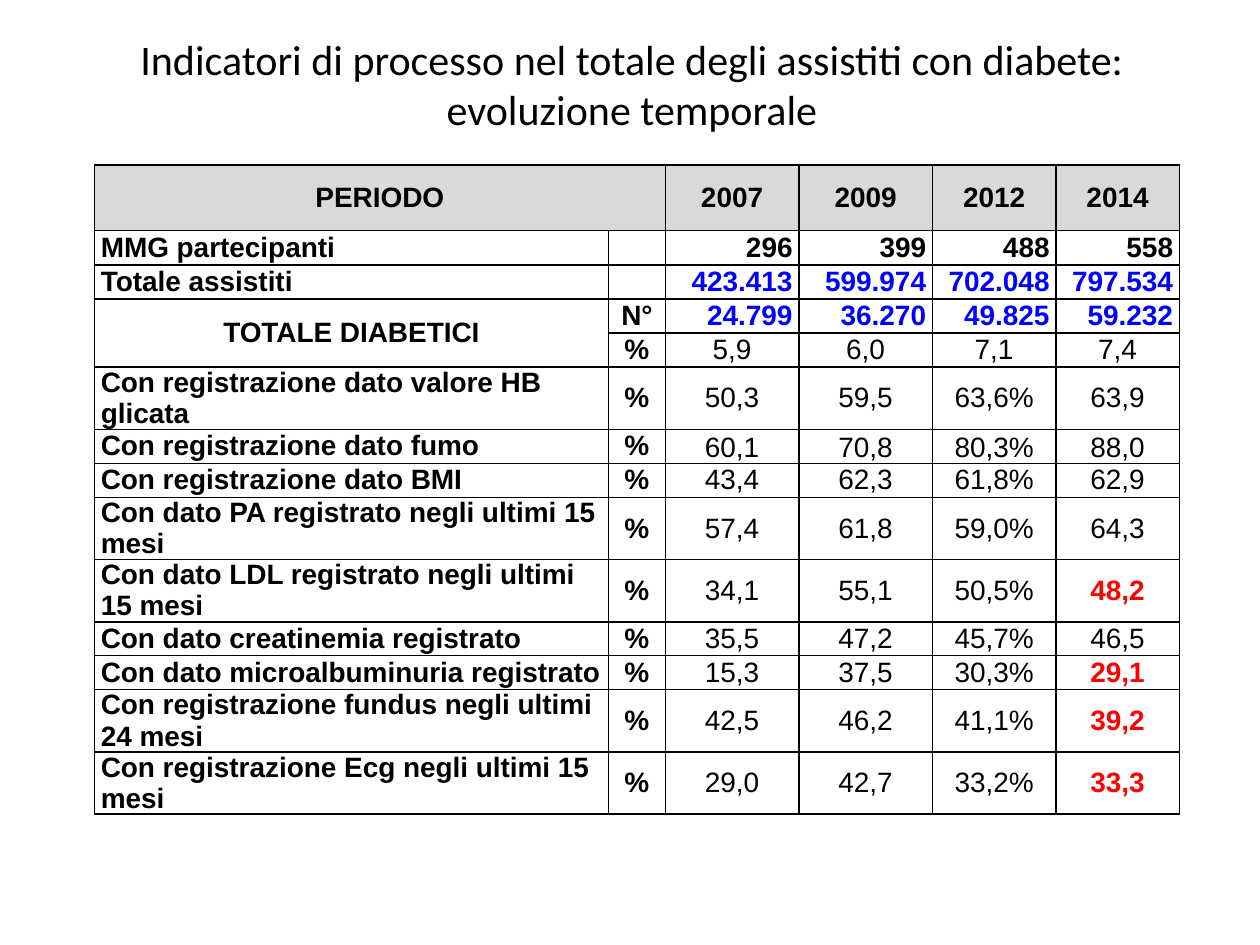
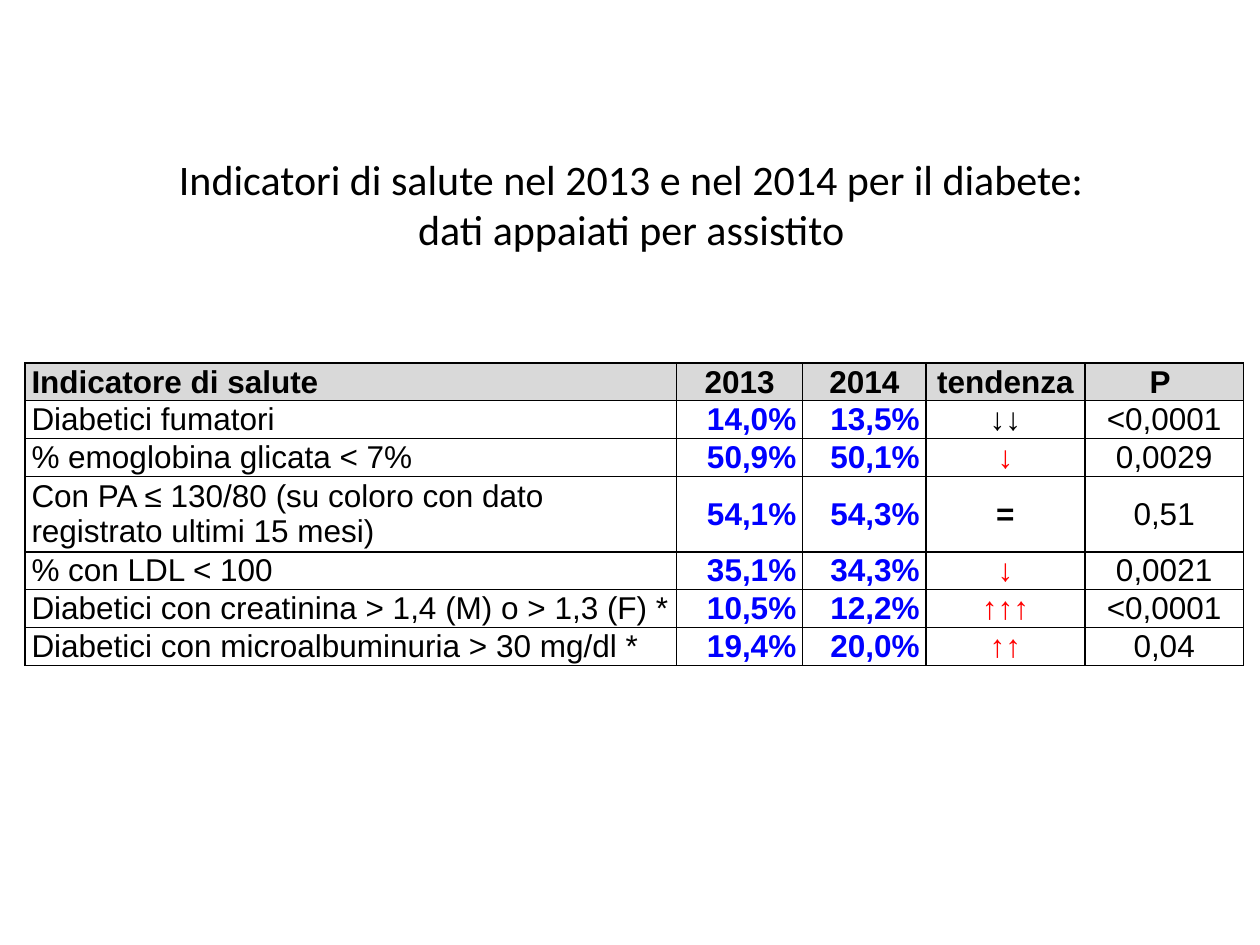
from dataclasses import dataclass, replace

from lxml.etree import SubElement
from pptx import Presentation
from pptx.dml.color import RGBColor
from pptx.enum.text import MSO_ANCHOR as Anchor, MSO_AUTO_SIZE as AutoSize, PP_ALIGN as Align
from pptx.oxml import parse_xml
from pptx.oxml.ns import nsdecls, qn
from pptx.util import Inches, Pt

# Shared look
BLACK, WHITE, GREY, BLUE, RED = "000000", "FFFFFF", "D9D9D9", "0000FF", "FF0000"
TITLE_FONT, TABLE_FONT = "Calibri", "Arial"
TITLE_SIZE = 24


@dataclass(frozen=True)
class Cell:
    text: str
    align: Align = Align.CENTER
    bold: bool = False
    color: str = BLACK
    fill: str = WHITE
    anchor: Anchor = Anchor.MIDDLE


@dataclass(frozen=True)
class Grid:
    left: float
    top: float
    widths: list[float]
    heights: list[float]
    size: int
    rows: list[list[Cell]]


def rgb(color: str) -> RGBColor:
    return RGBColor.from_string(color)


def write(frame, text: str, *, font: str, size: int, color: str = BLACK,
          bold: bool = False, align: Align = Align.CENTER) -> None:
    frame.text = text
    para = frame.paragraphs[0]
    para.alignment = align
    for span in para.runs:
        span.font.name, span.font.size, span.font.bold = font, Pt(size), bold
        span.font.color.rgb = rgb(color)
    if not text:  # keeps an empty cell as low as its row
        SubElement(para._p, qn("a:endParaRPr"), sz=str(size * 100))


def draw_borders(cell, color: str = BLACK, width: float = 1) -> None:
    properties = cell._tc.get_or_add_tcPr()
    for index, side in enumerate(("lnL", "lnR", "lnT", "lnB")):
        properties.insert(index, parse_xml(
            f'<a:{side} {nsdecls("a")} w="{Pt(width)}"><a:solidFill>'
            f'<a:srgbClr val="{color}"/></a:solidFill></a:{side}>'))


def draw_grid(page, grid: Grid):
    table = page.shapes.add_table(
        len(grid.heights), len(grid.widths), Inches(grid.left), Inches(grid.top),
        Inches(sum(grid.widths)), Inches(sum(grid.heights))).table
    table.first_row = table.horz_banding = False
    for column, width in zip(table.columns, grid.widths):
        column.width = Inches(width)
    for line, height in zip(table.rows, grid.heights):
        line.height = Inches(height)
    for row, looks in enumerate(grid.rows):
        for column, look in enumerate(looks):
            cell = table.cell(row, column)
            cell.margin_left = cell.margin_right = Inches(0.05)
            cell.margin_top = cell.margin_bottom = 0
            cell.vertical_anchor = look.anchor
            write(cell.text_frame, look.text, font=TABLE_FONT, size=grid.size,
                  color=look.color, bold=look.bold, align=look.align)
            draw_borders(cell)
            cell.fill.solid()
            cell.fill.fore_color.rgb = rgb(look.fill)
    return table


def add_page(deck, title: str, left: float, top: float, width: float, height: float):
    page = deck.slides.add_slide(deck.slide_layouts[5])
    box = page.shapes.title
    box.left, box.top, box.width, box.height = map(Inches, (left, top, width, height))
    frame = box.text_frame
    frame.word_wrap, frame.auto_size = True, AutoSize.NONE
    frame.vertical_anchor = Anchor.MIDDLE
    write(frame, title, font=TITLE_FONT, size=TITLE_SIZE)
    return page


def header(texts: list[str], anchor: Anchor = Anchor.MIDDLE) -> list[Cell]:
    return [Cell(text, bold=True, fill=GREY, anchor=anchor) for text in texts]


# Slide 1: process indicators
COUNTS = [
    ("MMG partecipanti", "", "296 399 488 558", BLACK),
    ("Totale assistiti", "", "423.413 599.974 702.048 797.534", BLUE),
    ("TOTALE DIABETICI", "N°", "24.799 36.270 49.825 59.232", BLUE),
]
SHARES = [
    ("", "5,9 6,0 7,1 7,4"),
    ("Con registrazione dato valore HB glicata", "50,3 59,5 63,6% 63,9"),
    ("Con registrazione dato fumo", "60,1 70,8 80,3% 88,0"),
    ("Con registrazione dato BMI", "43,4 62,3 61,8% 62,9"),
    ("Con dato PA registrato negli ultimi 15 mesi", "57,4 61,8 59,0% 64,3"),
    ("Con dato LDL registrato negli ultimi 15 mesi", "34,1 55,1 50,5% 48,2"),
    ("Con dato creatinemia registrato", "35,5 47,2 45,7% 46,5"),
    ("Con dato microalbuminuria registrato", "15,3 37,5 30,3% 29,1"),
    ("Con registrazione fundus negli ultimi 24 mesi", "42,5 46,2 41,1% 39,2"),
    ("Con registrazione Ecg negli ultimi 15 mesi", "29,0 42,7 33,2% 33,3"),
]
LOW_SHARES = {"48,2", "29,1", "39,2", "33,3"}


def share_cell(text: str, anchor: Anchor) -> Cell:
    low = text in LOW_SHARES
    return Cell(text, bold=low, color=RED if low else BLACK, anchor=anchor)


def process_page(deck) -> None:
    page = add_page(deck, "Indicatori di processo nel totale degli assistiti con diabete: "
                    "evoluzione temporale", 0.84, 0.21, 8.35, 0.91)
    rows = [header(["PERIODO", "", "2007", "2009", "2012", "2014"])]
    for label, unit, values, color in COUNTS:
        align = Align.CENTER if unit else Align.LEFT
        rows.append([Cell(label, align, True), Cell(unit, bold=True)]
                    + [Cell(value, Align.RIGHT, True, color) for value in values.split()])
    for label, values in SHARES:
        anchor = Anchor.BOTTOM if label.endswith("fumo") else Anchor.MIDDLE
        rows.append([Cell(label, Align.LEFT, True), Cell("%", bold=True)]
                    + [share_cell(value, anchor) for value in values.split()])
    table = draw_grid(page, Grid(
        0.75, 1.31, [4.08, 0.45, 1.06, 1.06, 0.98, 0.98],
        [0.52] + [0.27] * (len(rows) - 1), 16, rows))
    table.cell(0, 0).merge(table.cell(0, 1))
    table.cell(3, 0).merge(table.cell(4, 0))


# Slide 2: health indicators
HEALTH = [
    ("Diabetici fumatori", "14,0%", "13,5%", "↓↓", "<0,0001"),
    ("% emoglobina glicata < 7%", "50,9%", "50,1%", "↓", "0,0029"),
    ("Con PA ≤ 130/80 (su coloro con dato registrato ultimi 15 mesi)",
     "54,1%", "54,3%", "=", "0,51"),
    ("% con LDL < 100", "35,1%", "34,3%", "↓", "0,0021"),
    ("Diabetici con creatinina > 1,4 (M) o > 1,3 (F) *", "10,5%", "12,2%", "↑↑↑", "<0,0001"),
    ("Diabetici con microalbuminuria > 30 mg/dl *", "19,4%", "20,0%", "↑↑", "0,04"),
]
NOT_WORSE = {"↓↓", "="}


def health_page(deck) -> None:
    page = add_page(deck, "Indicatori di salute nel 2013 e nel 2014 per il diabete:\v"
                    "dati appaiati per assistito", 0.51, 0.99, 9, 1.25)
    rows = [header(["Indicatore di salute", "2013", "2014", "tendenza", "P "], Anchor.BOTTOM)]
    rows[0][0] = replace(rows[0][0], align=Align.LEFT)
    for label, before, after, trend, p_value in HEALTH:
        steady = trend in NOT_WORSE
        rows.append([
            Cell(label, Align.LEFT),
            *(Cell(value, Align.RIGHT, True, BLUE) for value in (before, after)),
            Cell(trend, bold=steady, color=BLACK if steady else RED),
            Cell(p_value),
        ])
    draw_grid(page, Grid(0.2, 2.88, [5.17, 1, 0.98, 1.26, 1.26],
                         [0.3, 0.3, 0.3, 0.6, 0.3, 0.3, 0.3], 18, rows))


def main() -> None:
    deck = Presentation()
    deck.slide_width, deck.slide_height = Inches(10), Inches(7.5)
    process_page(deck)
    health_page(deck)
    deck.save("out.pptx")


if __name__ == "__main__":
    main()
